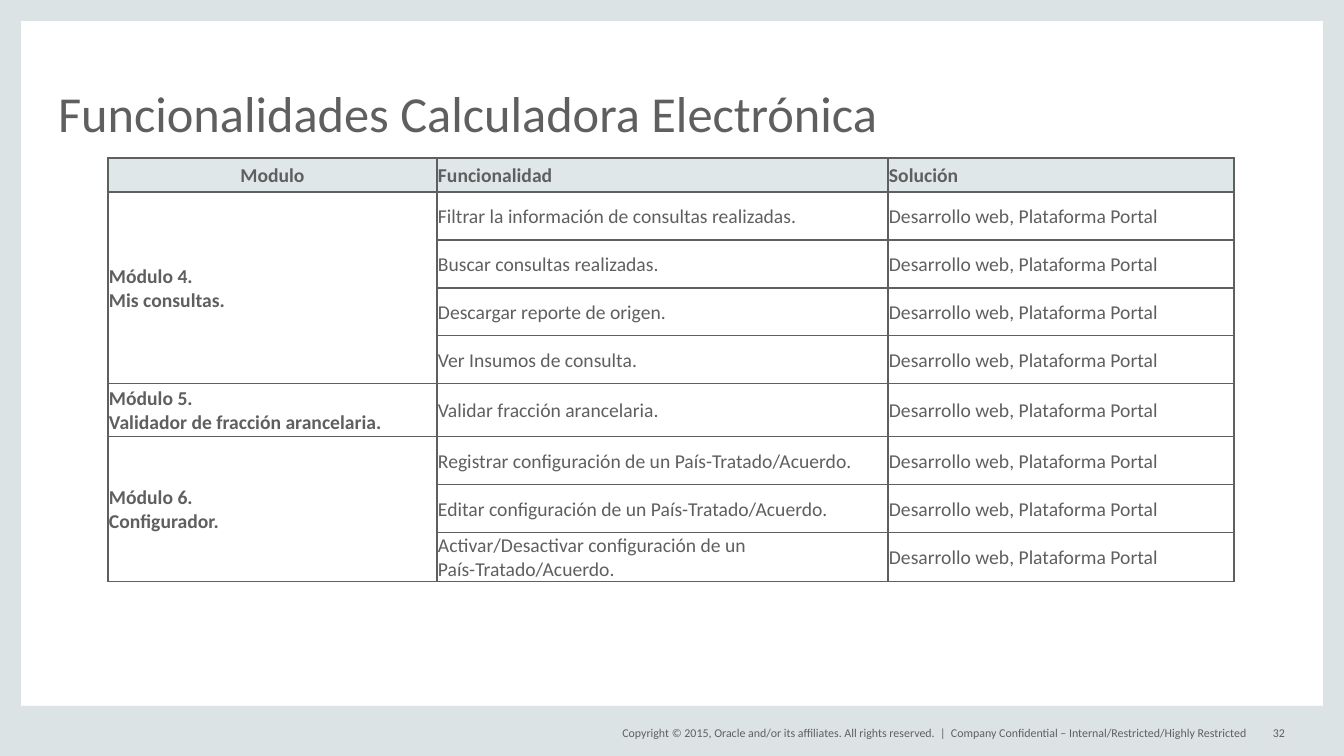
from lxml import etree
from pptx import Presentation
from pptx import util as u
from pptx.dml.color import RGBColor
from pptx.enum import shapes, text
from pptx.oxml import ns

EMU_PER_PX = 914400 / 100.8
WIDTH, HEIGHT = 1344, 756
GRAY, FRAME, HEADER = "5F5F5F", "DCE3E4", "DFE7E9"
LEFT, CENTER, RIGHT = text.PP_ALIGN.LEFT, text.PP_ALIGN.CENTER, text.PP_ALIGN.RIGHT
MIDDLE, BOTTOM = text.MSO_ANCHOR.MIDDLE, text.MSO_ANCHOR.BOTTOM

FRAME_BARS = [(0, 0, 21, HEIGHT), (1323, 0, 21, HEIGHT),
              (0, 706, WIDTH, 50), (0, 0, WIDTH, 21)]
COLUMN_WIDTHS = [329, 451, 346]
HEADINGS = ["Modulo", "Funcionalidad", "Solución"]
SOLUTION = "Desarrollo web, Plataforma Portal"
HEADING_HEIGHT = 34
# Module name, row height, functions
MODULES = [
    ("Módulo 4.\vMis consultas.", 48, [
        "Filtrar la información de consultas realizadas.",
        "Buscar consultas realizadas.",
        "Descargar reporte de origen.",
        "Ver Insumos de consulta."]),
    ("Módulo 5.\vValidador de fracción arancelaria.", 53, [
        "Validar fracción arancelaria."]),
    ("Módulo 6.\vConfigurador.", 48, [
        "Registrar configuración de un País-Tratado/Acuerdo.",
        "Editar configuración de un País-Tratado/Acuerdo.",
        "Activar/Desactivar configuración de un País-Tratado/Acuerdo."]),
]


def px(value):
    return u.Emu(round(value * EMU_PER_PX))


def color(hex_string):
    return RGBColor.from_string(hex_string)


def write(frame, content, size=14, bold=False, align=LEFT, spacing=None):
    frame.text = content
    paragraph = frame.paragraphs[0]
    paragraph.alignment = align
    if spacing:
        paragraph.line_spacing = spacing
    for run in paragraph.runs:
        run.font.name = "Calibri"
        run.font.size = u.Pt(size)
        run.font.bold = bold
        run.font.color.rgb = color(GRAY)


def set_frame(frame, anchor, wrap):
    frame.margin_left = frame.margin_right = 0
    frame.margin_top = frame.margin_bottom = 0
    frame.vertical_anchor = anchor
    frame.word_wrap = wrap
    frame.auto_size = text.MSO_AUTO_SIZE.NONE


def add_bar(slide, box):
    bar = slide.shapes.add_shape(shapes.MSO_SHAPE.RECTANGLE, *map(px, box))
    bar.shadow.inherit = False
    bar.fill.solid()
    bar.fill.fore_color.rgb = color(FRAME)
    bar.line.fill.background()


def add_title(slide, content):
    title = slide.shapes.title
    title.left, title.top, title.width, title.height = map(px, (58, 44, 1227, 98))
    set_frame(title.text_frame, BOTTOM, True)
    write(title.text_frame, content, size=36, spacing=0.8)


def add_footer(slide, content, left, width, align):
    box = slide.shapes.add_textbox(px(left), px(723), px(width), px(20))
    set_frame(box.text_frame, MIDDLE, False)
    write(box.text_frame, content, size=8.5, align=align)


def add_borders(cell):
    properties = cell._tc.get_or_add_tcPr()
    for index, side in enumerate(["lnL", "lnR", "lnT", "lnB"]):
        line = etree.Element(ns.qn("a:" + side), w=str(u.Pt(1)))
        fill = etree.SubElement(line, ns.qn("a:solidFill"))
        etree.SubElement(fill, ns.qn("a:srgbClr"), val=GRAY)
        properties.insert(index, line)


def format_cell(cell, fill=None):
    cell.margin_left = cell.margin_right = cell.margin_top = px(1)
    cell.margin_bottom = 0
    cell.vertical_anchor = MIDDLE
    if fill:
        cell.fill.solid()
        cell.fill.fore_color.rgb = color(fill)
    else:
        cell.fill.background()
    add_borders(cell)


def add_module_table(slide):
    heights = [HEADING_HEIGHT]
    for _, height, functions in MODULES:
        heights += [height] * len(functions)
    table = slide.shapes.add_table(
        len(heights), len(COLUMN_WIDTHS), px(108), px(158),
        px(sum(COLUMN_WIDTHS)), px(sum(heights))).table
    table.first_row = table.horz_banding = False
    for column, width in zip(table.columns, COLUMN_WIDTHS):
        column.width = px(width)
    for index, height in enumerate(heights):
        table.rows[index].height = px(height)
        for cell in table.rows[index].cells:
            format_cell(cell, HEADER if index == 0 else None)

    for column, heading in enumerate(HEADINGS):
        write(table.cell(0, column).text_frame, heading, bold=True,
              align=LEFT if column else CENTER)
    row = 1
    for module, _, functions in MODULES:
        module_cell = table.cell(row, 0)
        if len(functions) > 1:
            module_cell.merge(table.cell(row + len(functions) - 1, 0))
        write(module_cell.text_frame, module, bold=True)
        for function in functions:
            write(table.cell(row, 1).text_frame, function)
            write(table.cell(row, 2).text_frame, SOLUTION)
            row += 1


def main():
    presentation = Presentation()
    presentation.slide_width, presentation.slide_height = px(WIDTH), px(HEIGHT)
    slide = presentation.slides.add_slide(presentation.slide_layouts[5])
    for box in FRAME_BARS:
        add_bar(slide, box)
    add_title(slide, "Funcionalidades Calculadora Electrónica")
    add_module_table(slide)
    add_footer(slide, "Copyright © 2015, Oracle and/or its affiliates. "
                      "All rights reserved.  |", 593, 353, RIGHT)
    add_footer(slide, "Company Confidential – Internal/Restricted/Highly Restricted",
               951, 302, LEFT)
    add_footer(slide, "32", 1243, 42, RIGHT)
    presentation.save("out.pptx")


if __name__ == "__main__":
    main()
